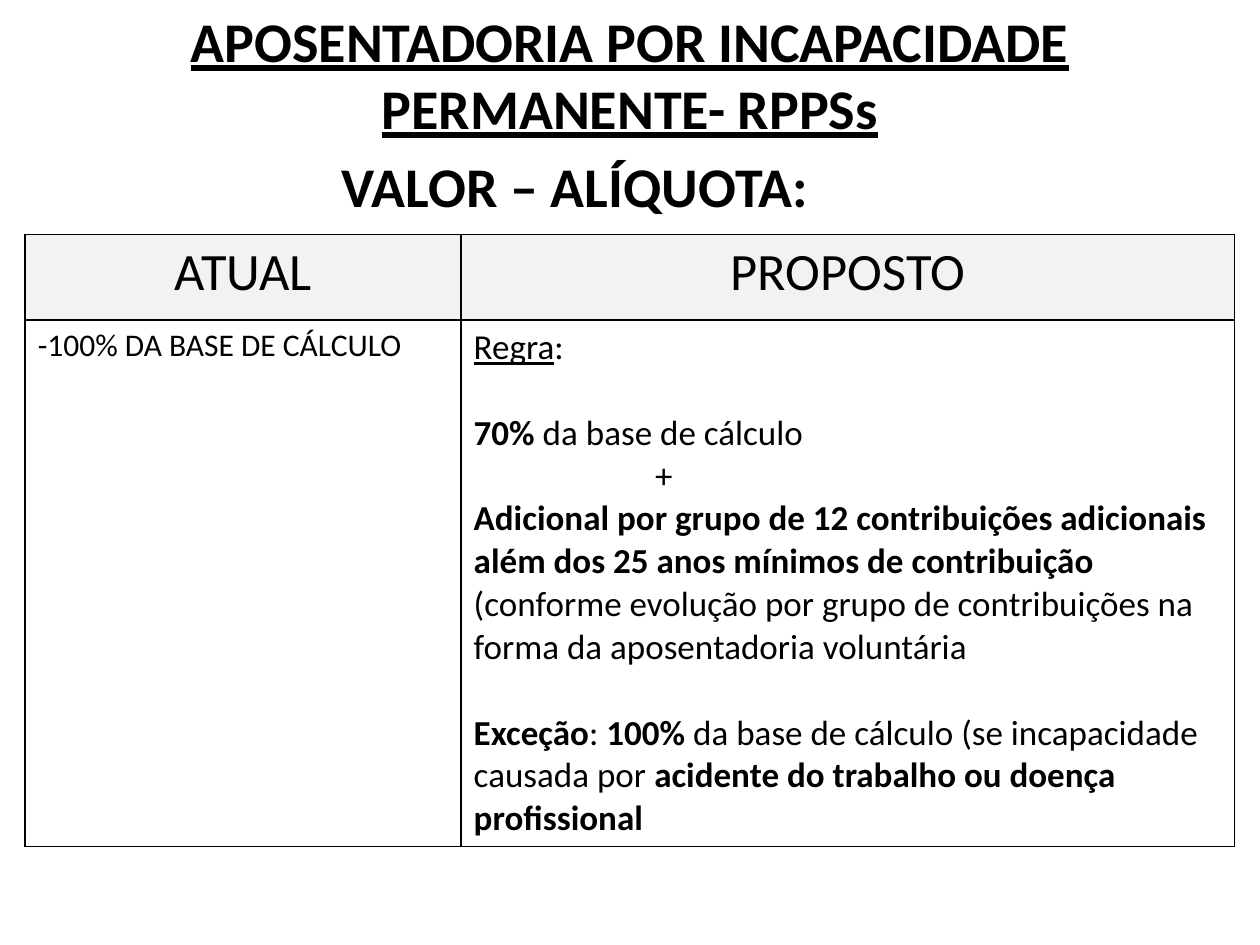
from lxml import etree
from pptx import Presentation
from pptx import util as u
from pptx.dml.color import RGBColor
from pptx.enum import text as t
from pptx.oxml.ns import qn

HEX = {"ink": "000000", "head": "F2F2F2", "page": "FFFFFF"}
FONT = "Calibri"
GAP = 24.4  # one line of 20 pt text

# Content: a paragraph is (runs, format); a run is (text, style), b bold, u underline
TITLE = [
    ([("APOSENTADORIA POR INCAPACIDADE PERMANENTE- RPPSs", "bu")], dict(mid=True)),
    ([("VALOR – ALÍQUOTA:", "b")], dict(left=2.61, gap=6.4)),
]
HEADS = ["ATUAL", "PROPOSTO"]
NOW = [([("-100% DA BASE DE CÁLCULO", "")], {})]
PLAN = [
    ([("Regra", "u"), (":", "")], {}),
    ([("70%", "b"), (" da base de cálculo", "")], dict(gap=GAP)),
    ([("+", "")], dict(left=1.44)),
    ([("Adicional por grupo de 12 contribuições adicionais além dos 25 anos "
       "mínimos de contribuição ", "b"),
      ("(conforme evolução por grupo de contribuições na forma da "
       "aposentadoria voluntária", "")], {}),
    ([("Exceção", "b"), (": ", ""), ("100%", "b"),
      (" da base de cálculo (se incapacidade causada por ", ""),
      ("acidente do trabalho ou doença profissional", "b")], dict(gap=GAP)),
]
COLS = [3.46, 6.14]
ROWS = [0.68, 4.18]


def write(frame, paras, size):
    """Fill a text frame with formatted paragraphs."""
    for i, (runs, form) in enumerate(paras):
        p = frame.paragraphs[0] if i == 0 else frame.add_paragraph()
        p.alignment = t.PP_ALIGN.CENTER if form.get("mid") else t.PP_ALIGN.LEFT
        p.space_before = u.Pt(form.get("gap", 0))
        if "left" in form:
            p._p.get_or_add_pPr().set("marL", str(u.Inches(form["left"])))
        for words, style in runs:
            r = p.add_run()
            r.text = words
            r.font.name, r.font.size = FONT, u.Pt(size)
            r.font.bold, r.font.underline = "b" in style, "u" in style
            r.font.color.rgb = RGBColor.from_string(HEX["ink"])


def edge(cell):
    """Draw a thin line on all four sides of a cell."""
    props = cell._tc.get_or_add_tcPr()
    for n, side in enumerate(("lnL", "lnR", "lnT", "lnB")):
        ln = etree.Element(qn("a:" + side), w=str(u.Pt(1)))
        fill = etree.SubElement(ln, qn("a:solidFill"))
        etree.SubElement(fill, qn("a:srgbClr"), val=HEX["ink"])
        props.insert(n, ln)


deck = Presentation()
deck.slide_width, deck.slide_height = u.Inches(10), u.Inches(7.5)
slide = deck.slides.add_slide(deck.slide_layouts[5])

# Title
title = slide.shapes.title
title.left, title.top = u.Inches(0), u.Inches(0)
title.width, title.height = u.Inches(10), u.Inches(1.8)
title.text_frame.auto_size = t.MSO_AUTO_SIZE.NONE
title.text_frame.vertical_anchor = t.MSO_ANCHOR.TOP
write(title.text_frame, TITLE, 32)

# Comparison table
table = slide.shapes.add_table(
    2, 2, u.Inches(0.2), u.Inches(1.86),
    u.Inches(sum(COLS)), u.Inches(sum(ROWS))).table
for col, wide in zip(table.columns, COLS):
    col.width = u.Inches(wide)
for row, high in zip(table.rows, ROWS):
    row.height = u.Inches(high)

heads = [([([(h, "")], dict(mid=True))], 30) for h in HEADS]
grid = [heads, [(NOW, 18), (PLAN, 20)]]
for row, line, tint in zip(table.rows, grid, ("head", "page")):
    for cell, (paras, size) in zip(row.cells, line):
        cell.fill.solid()
        cell.fill.fore_color.rgb = RGBColor.from_string(HEX[tint])
        edge(cell)
        write(cell.text_frame, paras, size)

deck.save("out.pptx")
